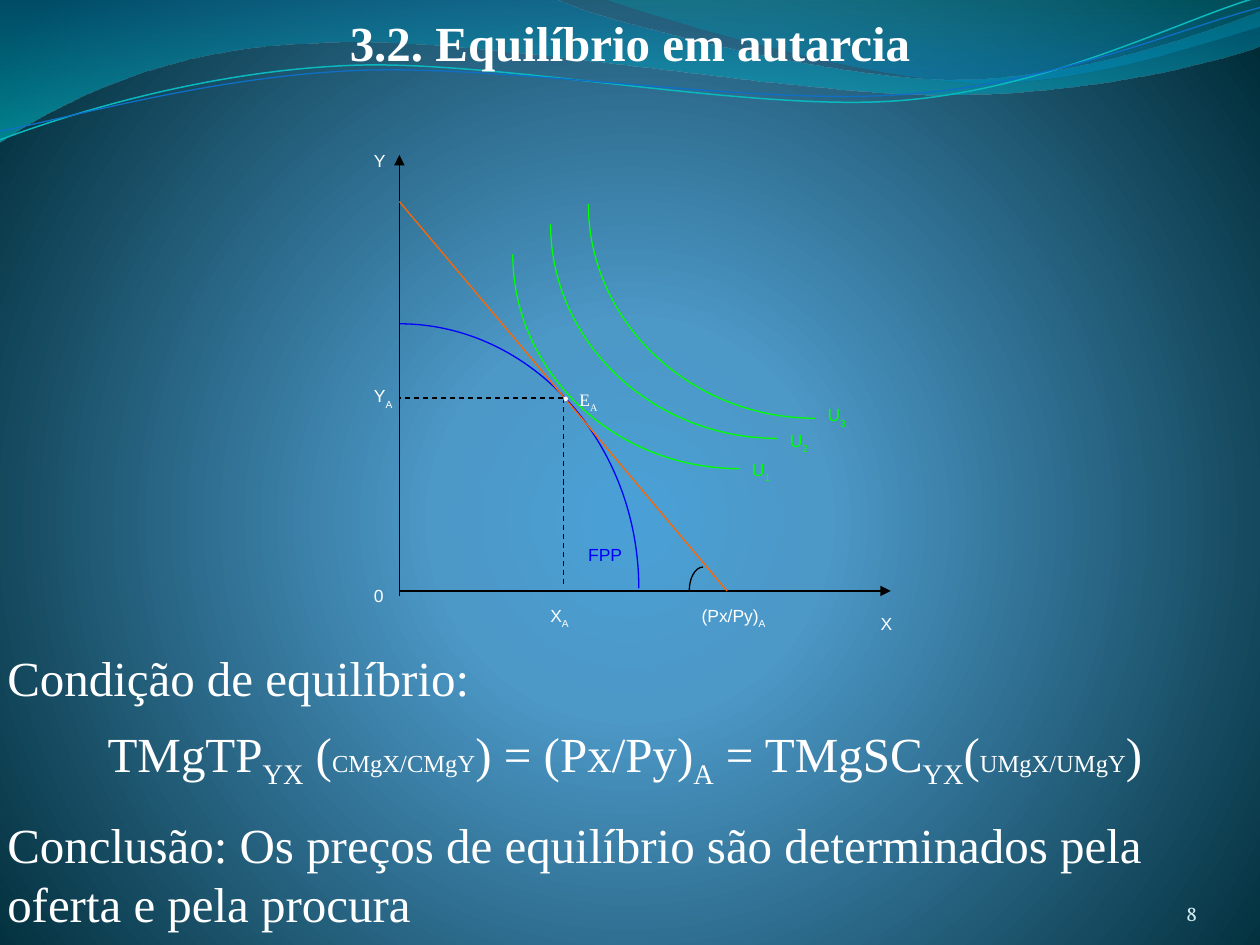
"""Build the slide on equilibrium in autarky on a grid of 100 columns by 75 rows."""
from dataclasses import dataclass
from typing import NamedTuple, Optional

from pptx import Presentation
from pptx import util as u
from pptx.dml.color import RGBColor
from pptx.enum import dml, text
from pptx.oxml import parse_xml
from pptx.oxml.ns import nsdecls, qn
from pptx.oxml.xmlchemy import OxmlElement

CELL = u.Inches(0.1)
COLUMNS, ROWS = 100, 75
COLORS = {
    "white": "FFFFFF", "black": "000000", "number": "D1EAEE",
    "frontier": "0000FF", "price": "FF6600", "utility": "00FF00",
    "teal": "0AB8BF", "blue": "0F6FC6",
}
SERIF, SANS, NUMBER_FONT = "Times New Roman", "Arial", "Vollkorn"
ORIGIN_X, ORIGIN_Y = 31.7, 46.9
EQUILIBRIUM_X, EQUILIBRIUM_Y = 44.7, 31.6
ARC_PULL = 0.55
LEFT, CENTER, RIGHT = text.PP_ALIGN.LEFT, text.PP_ALIGN.CENTER, text.PP_ALIGN.RIGHT
TOP, MIDDLE, BOTTOM = text.MSO_ANCHOR.TOP, text.MSO_ANCHOR.MIDDLE, text.MSO_ANCHOR.BOTTOM


class Span(NamedTuple):
    words: str
    baseline: int = 0
    size: Optional[float] = None


class Stop(NamedTuple):
    position: int
    color: str
    opacity: int = 100


@dataclass
class Label:
    left: float
    top: float
    spans: list
    width: float = 10
    height: float = 5
    size: float = 10
    font: str = SANS
    color: str = "white"
    bold: bool = False
    align: int = LEFT
    anchor: int = TOP
    grow: bool = False
    inset: bool = True
    bullet_indent: float = 0


@dataclass
class Curve:
    """Points joined by steps: L takes one point, C takes three."""
    points: list
    steps: str
    color: Optional[str] = None
    weight: float = 0.75
    stops: tuple = ()


@dataclass
class Line:
    start: tuple
    end: tuple
    color: str = "black"
    arrow: bool = False
    dashed: bool = False


def grid(cells: float) -> int:
    return round(cells * CELL)


def rgb(name: str) -> RGBColor:
    return RGBColor.from_string(COLORS[name])


def set_gradient(fill, holder, stops, direction: str) -> None:
    fill.gradient()
    stop_xml = "".join(
        f'<a:gs pos="{s.position * 1000}"><a:srgbClr val="{s.color}">'
        f'<a:alpha val="{s.opacity * 1000}"/></a:srgbClr></a:gs>' for s in stops)
    old = holder.find(qn("a:gradFill"))
    holder.replace(old, parse_xml(
        f'<a:gradFill {nsdecls("a")} rotWithShape="1"><a:gsLst>{stop_xml}</a:gsLst>{direction}</a:gradFill>'))


def draw_curve(page, curve: Curve) -> None:
    points = [(grid(x), grid(y)) for x, y in curve.points]
    builder = page.shapes.build_freeform(*points[0])
    builder.add_line_segments(points[1:], close=bool(curve.stops))
    shape = builder.convert_to_shape()
    shape.shadow.inherit = False
    outline = shape._element.xpath(".//a:path")[0]
    segments = iter(outline.findall(qn("a:lnTo")))
    for step in curve.steps:
        first = next(segments)
        if step == "C":
            bezier = OxmlElement("a:cubicBezTo")
            first.addprevious(bezier)
            for segment in (first, next(segments), next(segments)):
                bezier.append(segment[0])
                outline.remove(segment)
    if curve.stops:
        set_gradient(shape.fill, shape._element.spPr, curve.stops, '<a:lin ang="5400000" scaled="0"/>')
        shape.line.fill.background()
    else:
        shape.fill.background()
        shape.line.color.rgb = rgb(curve.color)
        shape.line.width = u.Pt(curve.weight)


def quarter(start: tuple, end: tuple, color: str) -> Curve:
    """Quarter ellipse that leaves its start horizontally."""
    (x1, y1), (x2, y2) = start, end
    pulls = [(x1 + ARC_PULL * (x2 - x1), y1), (x2, y2 - ARC_PULL * (y2 - y1))]
    return Curve([start, *pulls, end], "C", color)


def draw_line(page, line: Line) -> None:
    connector = page.shapes.add_connector(1, *map(grid, line.start + line.end))
    connector.line.color.rgb = rgb(line.color)
    connector.line.width = u.Pt(0.75)
    if line.dashed:
        connector.line.dash_style = dml.MSO_LINE.DASH
    if line.arrow:
        head = OxmlElement("a:tailEnd")
        head.set("type", "triangle")
        connector.line._get_or_add_ln().append(head)
    connector._element.spPr.append(OxmlElement("a:effectLst"))


def write_label(box, label: Label) -> None:
    box.left, box.top = grid(label.left), grid(label.top)
    box.width, box.height = grid(label.width), grid(label.height)
    frame = box.text_frame
    frame.word_wrap = True
    frame.auto_size = text.MSO_AUTO_SIZE.SHAPE_TO_FIT_TEXT if label.grow else text.MSO_AUTO_SIZE.NONE
    frame.vertical_anchor = label.anchor
    if not label.inset:
        frame.margin_left = frame.margin_right = frame.margin_top = frame.margin_bottom = 0
    para = frame.paragraphs[0]
    para.alignment = label.align
    if label.bullet_indent:
        properties = para._p.get_or_add_pPr()
        properties.set("marL", str(grid(label.bullet_indent)))
        properties.set("indent", str(-grid(label.bullet_indent)))
        bullet = OxmlElement("a:buChar")
        bullet.set("char", "•")
        properties.append(bullet)
    for span in label.spans:
        run = para.add_run()
        run.text = span.words
        run.font.size = u.Pt(span.size or label.size)
        run.font.name, run.font.bold = label.font, label.bold
        run.font.color.rgb = rgb(label.color)
        if span.baseline:
            run.font._element.set("baseline", str(span.baseline * 1000))


def draw_label(page, label: Label) -> None:
    write_label(page.shapes.add_textbox(0, 0, CELL, CELL), label)


def statement(top: float, spans: list, height: float = 5.7, align: int = LEFT) -> Label:
    return Label(-0.4, top, spans, COLUMNS, height, 28, SERIF, align=align, anchor=MIDDLE, grow=True)


def symbol(letter: str, index: str = "") -> list:
    return [Span(letter)] + ([Span(index, -30)] if index else [])


WAVES = [
    Curve([(0, 0), (44, -0.1), (47.6, 1.7), (66.4, 6.3), (75.8, 6.3), (85.3, 6.3), (95.8, 2.6), (100, 0.9),
           (100.1, 3.6), (98.3, 4.4), (87, 7.6), (74.6, 7.5), (62.2, 7.5), (38.2, 2.8), (25.7, 3.4),
           (12.9, 3.6), (4.6, 8.3), (-0.1, 11.3)], "LCCLCCC",
          stops=(Stop(0, "0074A1", 45), Stop(100, "00C6CF", 55))),
    Curve([(47.9, -0.1), (50.9, 1.1), (68.2, 6.2), (76.9, 6.5), (85.6, 6.9), (96.1, 3.2), (100, 2.1),
           (100, 0)], "CCL", stops=(Stop(0, "00A1A9", 30), Stop(80, "008BBF", 45))),
    Curve([(0, 11.1), (4.8, 9.3), (15.8, 5.7), (27.7, 5.2), (39.5, 4.7), (59.3, 8.9), (71.3, 8),
           (83.3, 7.1), (93.8, 1.5), (99.8, -0.2)], "CCC", "teal", 0.85),
    Curve([(0, 10.4), (4.7, 9.6), (16.4, 6.1), (28.3, 5.6), (40.3, 5.1), (59.7, 8.4), (71.7, 7.5),
           (83.6, 6.7), (94.1, 2.1), (100, 0.6)], "CCC", "blue"),
]
UTILITIES = [("1", 40.7, 20.2, 35.9), ("2", 43.7, 17.8, 33.6), ("3", 46.7, 16.2, 31.6)]
ARCS = [quarter((ORIGIN_X, 25.7), (50.7, 46.7), "frontier"), quarter((55.8, 45), (54.7, ORIGIN_Y), "black")]
ARCS += [quarter((x + 18, y + 17), (x, y), "utility") for _, x, y, _ in UTILITIES]
LINES = [
    Line((ORIGIN_X, 47.3), (ORIGIN_X, 12.3), arrow=True),
    Line((ORIGIN_X, ORIGIN_Y), (70.7, ORIGIN_Y), arrow=True),
    Line((ORIGIN_X, 16), (57.7, ORIGIN_Y), "price"),
    Line((EQUILIBRIUM_X, EQUILIBRIUM_Y), (ORIGIN_X, EQUILIBRIUM_Y), dashed=True),
    Line((EQUILIBRIUM_X, EQUILIBRIUM_Y), (EQUILIBRIUM_X, 46.6), dashed=True),
]
TITLE = Label(0, 0.5, [Span("3.2. Equilíbrio em autarcia")], COLUMNS, 5.7, 28, SERIF,
              bold=True, align=CENTER, grow=True)
LABELS = [
    Label(43.7, 30.4, symbol("E", "A"), font=SERIF, bullet_indent=1.3),
    *(Label(x + 18, top, symbol("U", index), color="utility") for index, x, _, top in UTILITIES),
    Label(45.7, 42.7, symbol("FPP"), color="frontier"),
    Label(68.9, 48.2, symbol("X")),
    Label(28.7, 11.4, symbol("Y")),
    Label(28.7, 45.9, symbol("0")),
    Label(42.7, 47.5, symbol("X", "A")),
    Label(28.7, 30.1, symbol("Y", "A")),
    Label(54.7, 47.5, symbol("(Px/Py)", "A")),
    Label(86.7, 69.5, [Span("8")], 8.3, 4, 12, NUMBER_FONT, "number", align=RIGHT, anchor=BOTTOM, inset=False),
    statement(50.9, [Span("Condição de equilíbrio:")]),
    statement(57.2, [
        Span("TMgTP"), Span("YX", -25), Span(" ("), Span("CMgX/CMgY", size=14), Span(") = (Px/Py)"),
        Span("A", -25), Span(" = TMgSC"), Span("YX", -25), Span("("), Span("UMgX/UMgY", size=14), Span(")"),
    ], align=CENTER),
    statement(64.1, [Span("Conclusão: Os preços de equilíbrio são determinados pela oferta e pela procura")], 10.4),
]


def main() -> None:
    deck = Presentation()
    deck.slide_width, deck.slide_height = grid(COLUMNS), grid(ROWS)
    page = deck.slides.add_slide(deck.slide_layouts[5])
    fill = page.background.fill
    set_gradient(fill, page._element.xpath(".//p:bgPr")[0],
                 (Stop(0, "4AA0D6"), Stop(25, "4C98C7"), Stop(100, "002C38")),
                 '<a:path path="circle"><a:fillToRect l="10000" t="110000" r="10000" b="100000"/></a:path>')
    for curve in WAVES:
        draw_curve(page, curve)
    title = page.shapes.title
    write_label(title, TITLE)
    page.shapes._spTree.append(title._element)
    for curve in ARCS:
        draw_curve(page, curve)
    for line in LINES:
        draw_line(page, line)
    for label in LABELS:
        draw_label(page, label)
    deck.save("out.pptx")


if __name__ == "__main__":
    main()
